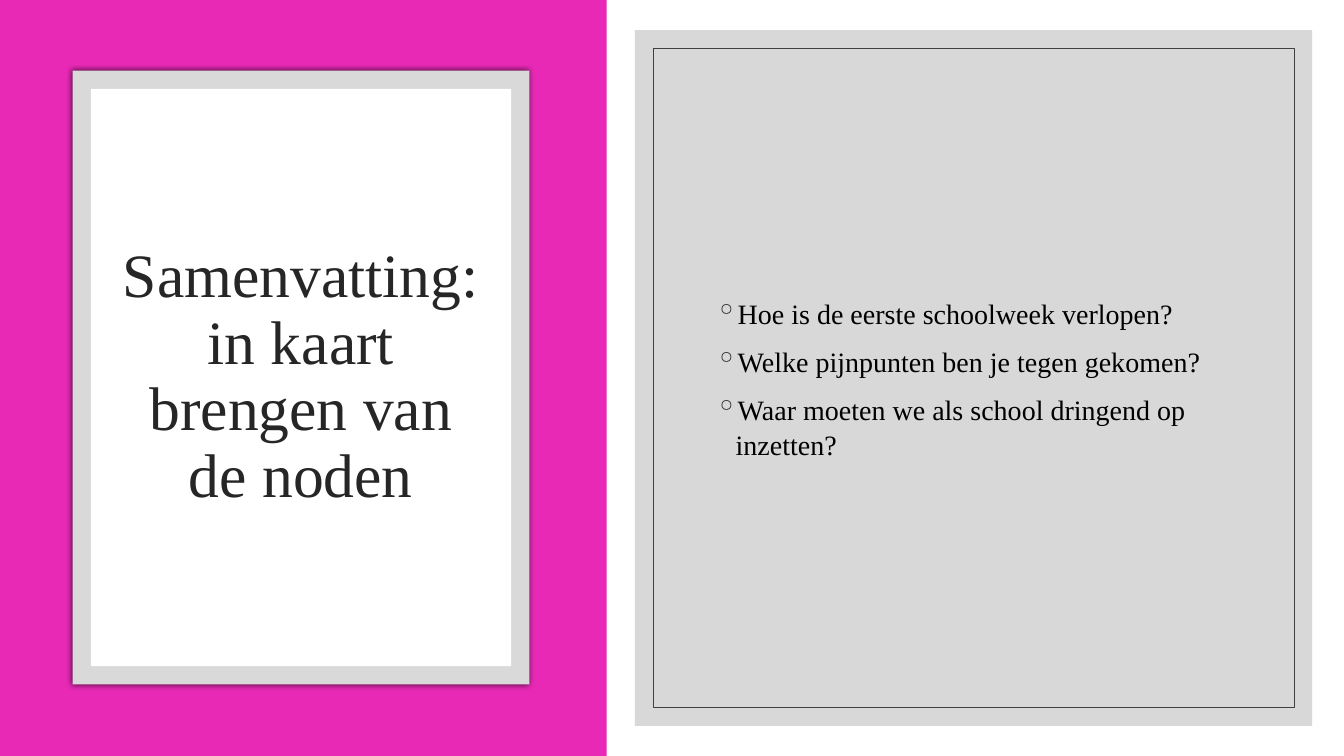
import pptx
import pptx.util
import pptx.dml.color
import pptx.enum.shapes
import pptx.enum.text
import pptx.oxml
import pptx.oxml.ns

Cm = pptx.util.Cm
Pt = pptx.util.Pt
FONT = "Times New Roman"
INSET = 0.46
COLORS = {
    "white": "FFFFFF",
    "pink": "E729B5",
    "frame": "D9D9D9",
    "panel": "BFBFBF",
    "line": "404040",
    "title": "262626",
    "text": "000000",
}
TITLE = "Samenvatting: in kaart brengen van de noden"
POINTS = [
    "Hoe is de eerste schoolweek verlopen?",
    "Welke pijnpunten ben je tegen gekomen?",
    "Waar moeten we als school dringend op inzetten?",
]


def color(name):
    return pptx.dml.color.RGBColor.from_string(COLORS[name])


def node(tag, body="", attrs=""):
    space = pptx.oxml.ns.nsdecls("a")
    return pptx.oxml.parse_xml(f"<a:{tag} {space} {attrs}>{body}</a:{tag}>")


def shrink(box, side, top=None):
    top = side if top is None else top
    left, up, width, height = box
    return left + side, up + top, width - 2 * side, height - 2 * top


def rect(slide, box, fill=None, line=None):
    kind = pptx.enum.shapes.MSO_SHAPE.RECTANGLE
    shape = slide.shapes.add_shape(kind, *map(Cm, box))
    shape.shadow.inherit = False
    if fill:
        shape.fill.solid()
        shape.fill.fore_color.rgb = color(fill)
    else:
        shape.fill.background()
    if line:
        shape.line.color.rgb = color(line)
        shape.line.width = Pt(0.5)
    else:
        shape.line.fill.background()
    return shape


def write(slide, box, lines, size, tone):
    frame = slide.shapes.add_textbox(*map(Cm, box)).text_frame
    frame.word_wrap = True
    frame.vertical_anchor = pptx.enum.text.MSO_ANCHOR.MIDDLE
    frame.text = "\n".join(lines)
    for para in frame.paragraphs:
        para.font.name = FONT
        para.font.size = Pt(size)
        para.font.color.rgb = color(tone)
    return frame.paragraphs


def bullet(para):
    props = para._p.get_or_add_pPr()
    props.set("marL", str(Cm(0.51)))
    props.set("indent", str(Cm(-0.51)))
    tint = node("buClr", f'<a:srgbClr val="{COLORS["title"]}"/>')
    mark = node("buChar", attrs='char="◦"')
    first = props.find(pptx.oxml.ns.qn("a:defRPr"))
    for part in (tint, mark):
        first.addprevious(part)


def title_card(slide, box):
    card = rect(slide, box, "frame")
    glow = node(
        "outerShdw",
        '<a:srgbClr val="000000"><a:alpha val="66000"/></a:srgbClr>',
        f'blurRad="{Pt(4)}" dist="0" dir="0" algn="ctr" rotWithShape="0"',
    )
    card._element.spPr.find(pptx.oxml.ns.qn("a:effectLst")).append(glow)
    rect(slide, shrink(box, INSET), "white")
    para = write(slide, shrink(box, 0.91, 1.5), [TITLE], 44, "title")[0]
    para.alignment = pptx.enum.text.PP_ALIGN.CENTER
    para.line_spacing = 0.9


def point_panel(slide, box):
    panel = rect(slide, box, "panel")
    fill = panel._element.spPr.find(".//" + pptx.oxml.ns.qn("a:srgbClr"))
    fill.append(node("alpha", attrs='val="60000"'))
    rect(slide, shrink(box, INSET), line="line")
    paras = write(slide, shrink(box, 1.78, 1.84), POINTS, 20, "text")
    for index, para in enumerate(paras):
        para.line_spacing = 1.05
        if index:
            para.space_before = Pt(9)
        bullet(para)


def main():
    deck = pptx.Presentation()
    deck.slide_width, deck.slide_height = Cm(33.87), Cm(19.05)
    slide = deck.slides.add_slide(deck.slide_layouts[6])
    rect(slide, (0, 0, 33.87, 19.05), "white")
    rect(slide, (0, 0, 15.29, 19.05), "pink")
    title_card(slide, (1.83, 1.78, 11.51, 15.47))
    point_panel(slide, (16, 0.76, 17.07, 17.53))
    deck.save("out.pptx")


if __name__ == "__main__":
    main()
